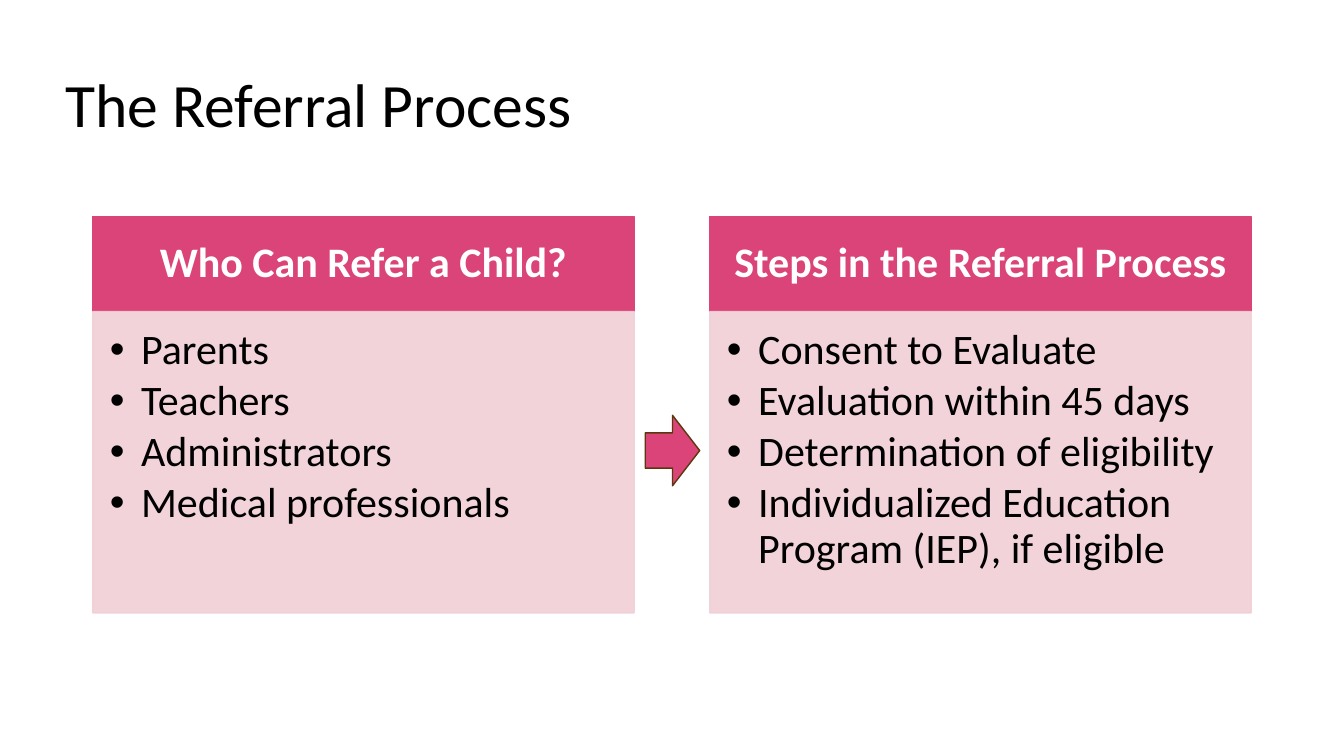
from lxml.etree import SubElement
from pptx import Presentation
from pptx.dml.color import RGBColor
from pptx.enum.shapes import MSO_SHAPE
from pptx.enum.text import MSO_ANCHOR, PP_ALIGN
from pptx.oxml.ns import qn
from pptx.util import Inches, Pt

COLORS = {"pink": "DB4478", "pale": "F1CFD6", "brown": "5C370E",
          "ink": "000000", "white": "FFFFFF"}
LEFT, STEP, WIDE = 0.92, 6.12, 5.37
TOP, HEAD, BODY = 2.15, 0.94, 2.99
PANELS = [
    ("Who Can Refer a Child?",
     ["Parents", "Teachers", "Administrators", "Medical professionals"]),
    ("Steps in the Referral Process",
     ["Consent to Evaluate", "Evaluation within 45 days",
      "Determination of eligibility",
      "Individualized Education Program (IEP), if eligible"]),
]


def paint(part, color, alpha=None):
    part.solid()
    part.fore_color.rgb = RGBColor.from_string(COLORS[color])
    if alpha:
        tint = part._xPr.find(qn("a:solidFill"))[0]
        SubElement(tint, qn("a:alpha"), val=str(alpha * 1000))


def add_block(slide, kind, box, fill, line, alpha=None):
    shape = slide.shapes.add_shape(kind, *map(Inches, box))
    shape.shadow.inherit = False
    paint(shape.fill, fill, alpha)
    paint(shape.line.fill, line, alpha)
    shape.line.width = Pt(1)
    return shape


def set_frame(frame, insets, anchor):
    frame.word_wrap = True
    frame.vertical_anchor = anchor
    (frame.margin_left, frame.margin_top,
     frame.margin_right, frame.margin_bottom) = map(Inches, insets)


def style(para, size, color, bold=False):
    for run in para.runs:
        run.font.name = "Calibri"
        run.font.size = Pt(size)
        run.font.bold = bold
        run.font.color.rgb = RGBColor.from_string(COLORS[color])


def add_title(slide, text):
    box = slide.shapes.add_textbox(*map(Inches, (0.55, 0.61, 11.45, 0.84)))
    set_frame(box.text_frame, (0.1, 0.05, 0.1, 0.05), MSO_ANCHOR.TOP)
    box.text_frame.text = text
    style(box.text_frame.paragraphs[0], 44, "ink")


def add_head(slide, left, text):
    shape = add_block(slide, MSO_SHAPE.RECTANGLE, (left, TOP, WIDE, HEAD),
                      "pink", "pink")
    frame = shape.text_frame
    set_frame(frame, (0.23, 0.13, 0.23, 0.13), MSO_ANCHOR.MIDDLE)
    frame.text = text
    para = frame.paragraphs[0]
    para.alignment = PP_ALIGN.CENTER
    para.line_spacing = 0.9
    style(para, 30, "white", True)


def add_list(slide, left, items):
    shape = add_block(slide, MSO_SHAPE.RECTANGLE,
                      (left, TOP + HEAD, WIDE, BODY), "pale", "pale", 90)
    frame = shape.text_frame
    set_frame(frame, (0.17, 0.17, 0.23, 0.26), MSO_ANCHOR.TOP)
    frame.text = "\n".join(items)
    for para in frame.paragraphs:
        props = para._p.get_or_add_pPr()
        props.set("marL", str(Inches(0.31)))
        props.set("indent", str(-Inches(0.31)))
        SubElement(props, qn("a:buFont"), typeface="Arial")
        SubElement(props, qn("a:buChar"), char="•")
        para.level = 1
        para.alignment = PP_ALIGN.LEFT
        para.line_spacing = 0.9
        para.space_after = Pt(4)
        style(para, 30, "ink")


def main():
    deck = Presentation()
    deck.slide_width, deck.slide_height = Inches(13.33), Inches(7.5)
    slide = deck.slides.add_slide(deck.slide_layouts[6])
    add_title(slide, "The Referral Process")
    for col, (head, items) in enumerate(PANELS):
        left = LEFT + col * STEP
        add_head(slide, left, head)
        add_list(slide, left, items)
    add_block(slide, MSO_SHAPE.RIGHT_ARROW, (6.4, 4.12, 0.54, 0.7),
              "pink", "brown")
    deck.save("out.pptx")


if __name__ == "__main__":
    main()
